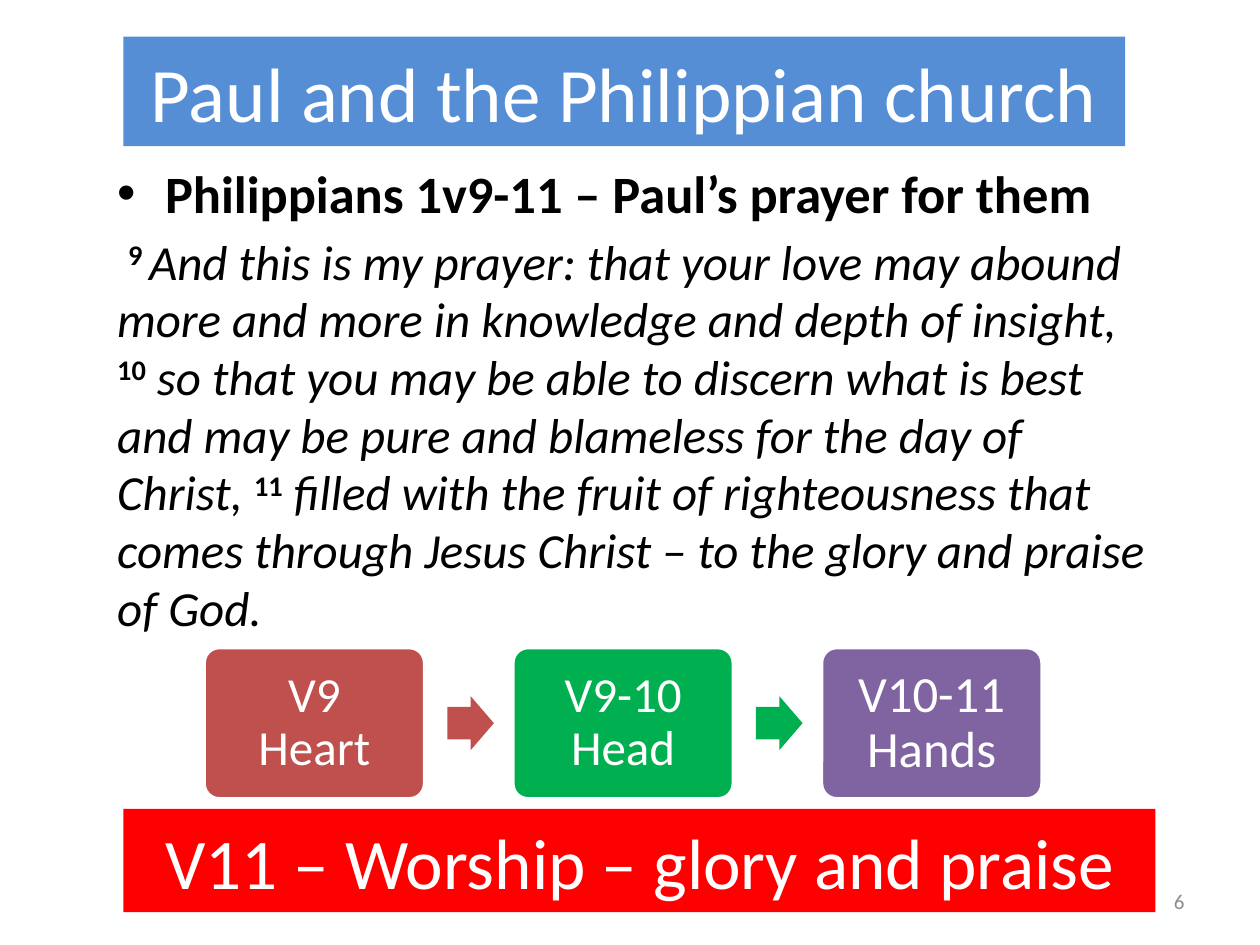
from pptx import Presentation
from pptx.dml.color import RGBColor
from pptx.enum.shapes import MSO_SHAPE as Shape
from pptx.enum.text import MSO_ANCHOR as Anchor, MSO_AUTO_SIZE as AutoSize, PP_ALIGN as Align
from pptx.oxml.ns import qn
from pptx.util import Inches, Pt
from lxml import etree

FONT = "Calibri"
COLORS = {"blue": "558ED5", "red": "FF0000", "heart": "C0504D", "head": "00B050",
          "hands": "8064A2", "white": "FFFFFF", "black": "000000", "grey": "8C8C8C"}

TITLE = "Paul and the Philippian church"
HEADING = "Philippians 1v9-11 – Paul’s prayer for them"
PASSAGE = [  # text, style
    (" ", "lead"),
    ("9 ", "verse"),
    ("And this is my prayer: that your love may abound more and more in knowledge "
     "and depth of insight, ", "words"),
    ("10", "verse"),
    (" so that you may be able to discern what is best and may be pure and blameless "
     "for the day of Christ, ", "words"),
    ("11", "verse"),
    (" filled with the fruit of righteousness that comes through Jesus Christ – to the "
     "glory and praise of God.", "words"),
]
STEPS = [("V9 Heart", "heart", 28), ("V9-10 Head", "head", 28), ("V10-11 Hands", "hands", 29)]
BANNER = "V11 – Worship – glory and praise"
PAGE_NUMBER = "6"

STEP_LEFT, STEP_TOP, STEP_WIDTH, STEP_HEIGHT, STEP_PITCH = 1.62, 5.14, 1.75, 1.2, 2.45
ARROW_OFFSET, ARROW_WIDTH, ARROW_HEIGHT = 1.93, 0.37, 0.43


def rgb(name):
    return RGBColor.from_string(COLORS[name])


def place(shape, left, top, width, height):
    shape.left, shape.top = Inches(left), Inches(top)
    shape.width, shape.height = Inches(width), Inches(height)


def fill(shape, color):
    shape.fill.solid()
    shape.fill.fore_color.rgb = rgb(color)


def style(span, size, color, bold=False, italic=False):
    span.font.name, span.font.size = FONT, Pt(size)
    span.font.bold, span.font.italic = bold, italic
    span.font.color.rgb = rgb(color)


def write(shape, text, size, color="white", align=Align.CENTER):
    """Set one vertically centred paragraph and return it."""
    frame = shape.text_frame
    frame.text = text
    frame.word_wrap = True
    frame.auto_size = AutoSize.NONE
    frame.vertical_anchor = Anchor.MIDDLE
    para = frame.paragraphs[0]
    para.alignment = align
    style(para.runs[0], size, color)
    return para


def add_block(page, kind, bounds, color):
    shape = page.shapes.add_shape(kind, *map(Inches, bounds))
    shape.shadow.inherit = False
    fill(shape, color)
    shape.line.fill.background()
    return shape


def set_bullet(para, indent, bullet=None):
    props = para._p.get_or_add_pPr()
    props.set("marL", str(Inches(indent)))
    props.set("indent", str(-Inches(indent)))
    if bullet:
        etree.SubElement(props, qn("a:buChar")).set("char", bullet)
    else:
        etree.SubElement(props, qn("a:buNone"))


def add_passage(body):
    frame = body.text_frame
    frame.auto_size = AutoSize.NONE
    frame.text = HEADING
    heading = frame.paragraphs[0]
    style(heading.runs[0], 30, "black", bold=True)
    set_bullet(heading, 0.38, "•")

    para = frame.add_paragraph()
    para.line_spacing = 0.98
    set_bullet(para, 0)
    for text, role in PASSAGE:
        span = para.add_run()
        span.text = text
        style(span, 28, "black", bold=role != "words", italic=role == "words")
        if role == "verse":
            span.font._element.set("baseline", "30000")


def add_steps(page):
    for index, (text, color, size) in enumerate(STEPS):
        left = STEP_LEFT + index * STEP_PITCH
        box = add_block(page, Shape.ROUNDED_RECTANGLE,
                        (left, STEP_TOP, STEP_WIDTH, STEP_HEIGHT), color)
        box.adjustments[0] = 0.1
        box.line.color.rgb = rgb("white")
        box.line.width = Pt(2)
        write(box, text, size).line_spacing = 0.9
        frame = box.text_frame
        frame.margin_left = frame.margin_right = Inches(0.15)
        frame.margin_top = frame.margin_bottom = Inches(0.15)
        if index < len(STEPS) - 1:
            top = STEP_TOP + (STEP_HEIGHT - ARROW_HEIGHT) / 2
            arrow = add_block(page, Shape.RIGHT_ARROW,
                              (left + ARROW_OFFSET, top, ARROW_WIDTH, ARROW_HEIGHT), color)
            arrow.adjustments[0], arrow.adjustments[1] = 0.6, 0.5


def main():
    deck = Presentation()
    deck.slide_width, deck.slide_height = Inches(10), Inches(7.5)
    page = deck.slides.add_slide(deck.slide_layouts[1])

    title, body = page.shapes.title, page.placeholders[1]
    place(title, 0.98, 0.29, 7.95, 0.87)
    fill(title, "blue")
    write(title, TITLE, 44)
    place(body, 0.83, 1.23, 8.43, 5.83)
    add_passage(body)

    number = page.shapes.add_textbox(*map(Inches, (7.17, 6.95, 2.33, 0.4)))
    write(number, PAGE_NUMBER, 12, "grey", Align.RIGHT)
    add_steps(page)
    banner = add_block(page, Shape.RECTANGLE, (0.98, 6.42, 8.19, 0.82), "red")
    write(banner, BANNER, 40.7)
    deck.save("out.pptx")


if __name__ == "__main__":
    main()
